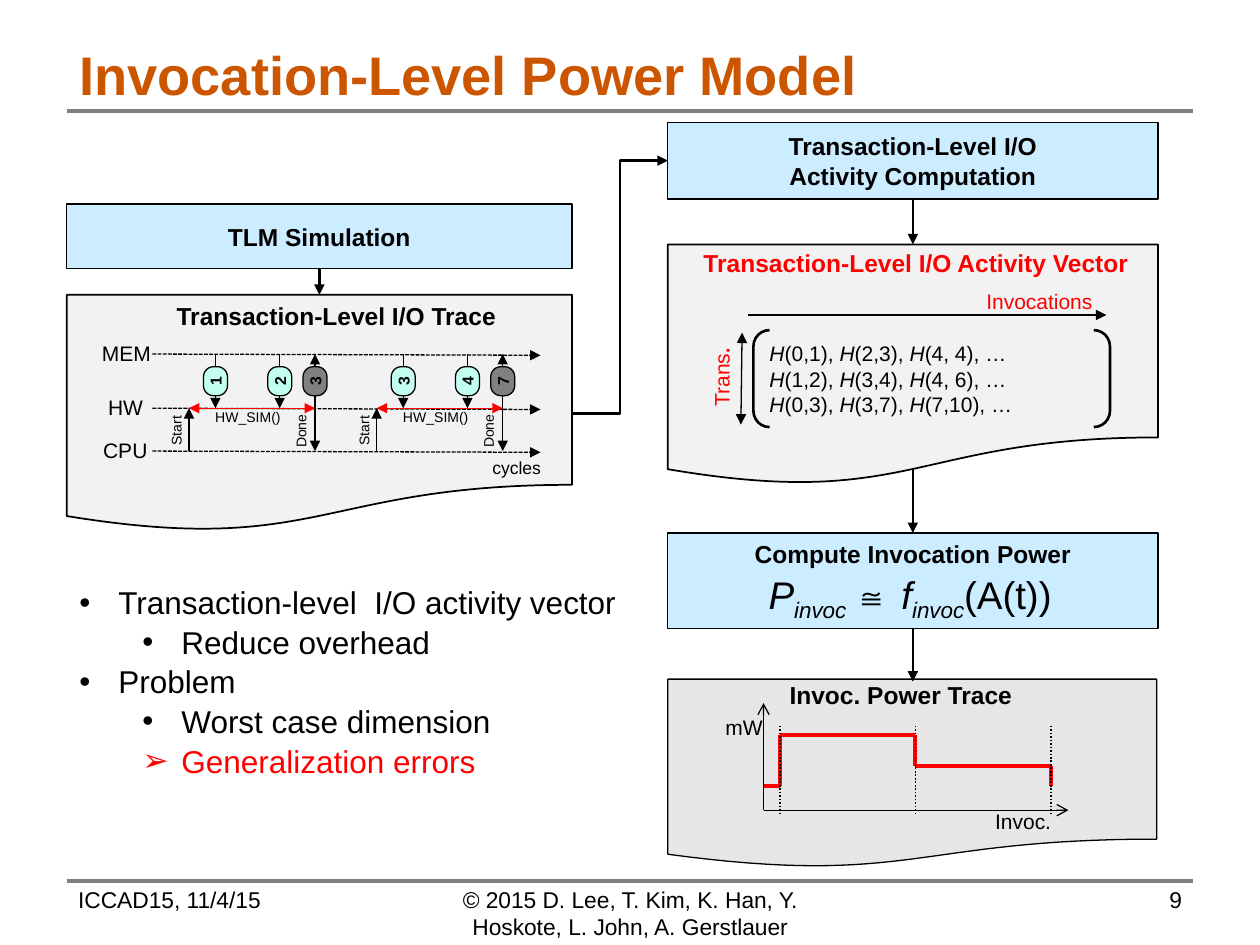
import dataclasses
import pptx
import pptx.util
import pptx.dml.color
import pptx.enum.dml
import pptx.enum.shapes
import pptx.enum.text
import pptx.oxml
import pptx.oxml.ns

RGB = pptx.dml.color.RGBColor
INK = RGB(0x00, 0x00, 0x00)
RED = RGB(0xFF, 0x00, 0x00)
RUST = RGB(0xCC, 0x55, 0x00)
GRAY = RGB(0x80, 0x80, 0x80)
SKY = RGB(0xCC, 0xEC, 0xFF)
MINT = RGB(0xC2, 0xFF, 0xF0)
PALE = RGB(0xF2, 0xF2, 0xF2)
ASH = RGB(0xE6, 0xE6, 0xE6)
KIND = pptx.enum.shapes.MSO_SHAPE
LINK = pptx.enum.shapes.MSO_CONNECTOR
DASH = pptx.enum.dml.MSO_LINE
SIDE = pptx.enum.text.PP_ALIGN
EDGE = pptx.enum.text.MSO_ANCHOR
WIDE, HIGH = pptx.util.Inches(10), pptx.util.Inches(7.5)
COLS = 100


def cell(n):
    return pptx.util.Emu(round(n * WIDE / COLS))


@dataclasses.dataclass
class Box:
    x: float
    y: float
    w: float
    h: float

    def sub(self, dx, dy, w, h):
        return Box(self.x + dx, self.y + dy, w, h)

    def span(self):
        return [cell(n) for n in (self.x, self.y, self.w, self.h)]


def add(par, text, size, color=INK, bold=False, slant=False, drop=False):
    run = par.add_run()
    run.text = text
    font = run.font
    font.name, font.size, font.color.rgb = "Arial", pptx.util.Pt(size), color
    font.bold, font.italic = bold, slant
    if drop:
        run._r.get_or_add_rPr().set("baseline", "-25000")


def setup(frame, pad=(1, 0.5), edge=EDGE.TOP, wrap=True):
    frame.margin_left = frame.margin_right = cell(pad[0])
    frame.margin_top = frame.margin_bottom = cell(pad[1])
    frame.vertical_anchor, frame.word_wrap = edge, wrap
    frame.auto_size = pptx.enum.text.MSO_AUTO_SIZE.NONE
    return frame


def note(pool, box, text, size, color=INK, bold=False, side=SIDE.LEFT, turn=0, **form):
    item = pool.add_textbox(*box.span())
    item.rotation = turn
    par = setup(item.text_frame, **form).paragraphs[0]
    par.alignment = side
    if text:
        add(par, text, size, color, bold)
    return par


def block(pool, box, kind, fill, lines=(), size=14, width=0.75, edge=EDGE.MIDDLE, pad=(0, 0.5)):
    item = pool.add_shape(kind, *box.span())
    paint(item, fill, width)
    frame = setup(item.text_frame, pad, edge)
    for i, text in enumerate(lines):
        par = frame.add_paragraph() if i else frame.paragraphs[0]
        par.alignment = SIDE.CENTER
        add(par, text, size, bold=True)
    return item


def paint(item, fill, width):
    item.shadow.inherit = False
    if fill is None:
        item.fill.background()
    else:
        item.fill.solid()
        item.fill.fore_color.rgb = fill
    item.line.color.rgb, item.line.width = INK, pptx.util.Pt(width)


def rule(pool, box, x1, y1, x2, y2, width=0.75, color=INK, dash=None, head=None, tail=None, kind=LINK.STRAIGHT):
    ends = [box.x + x1, box.y + y1, box.x + x2, box.y + y2]
    item = pool.add_connector(kind, *[cell(n) for n in ends])
    item.line.color.rgb, item.line.width = color, pptx.util.Pt(width)
    if dash:
        item.line.dash_style = dash
    ln = item.get_or_add_ln()
    for tag, tip in (("a:headEnd", head), ("a:tailEnd", tail)):
        if tip:
            end = pptx.oxml.ns.qn(tag)
            ln.append(ln.makeelement(end, {"type": tip}))
    item._element.spPr.append(ln.makeelement(pptx.oxml.ns.qn("a:effectLst"), {}))
    return item


def join(pool, box, start=None, end=None, kind=LINK.STRAIGHT):
    item = rule(pool, box, 0, 0, box.w, box.h, 1.5, tail="triangle", kind=kind)
    if start:
        item.begin_connect(*start)
    if end:
        item.end_connect(*end)


def header(slide, box):
    title = slide.shapes.title
    title.left, title.top, title.width, title.height = box.span()
    par = setup(title.text_frame, edge=EDGE.MIDDLE).paragraphs[0]
    par.alignment = SIDE.LEFT
    add(par, "Invocation-Level Power Model", 31, RUST, True)
    rule(slide.shapes, box, 0, box.h, box.w, box.h, 2.25, GRAY)


def footer(pool, box):
    rule(pool, box, 0, 0, box.w, 0, 2.25, GRAY)
    parts = ((0, 23.5, "ICCAD15, 11/4/15", SIDE.LEFT),
             (30.3, 28.8, "© 2015 D. Lee, T. Kim, K. Han, Y. Hoskote, L. John, A. Gerstlauer", SIDE.CENTER),
             (65.9, 23.5, "9", SIDE.RIGHT))
    for dx, w, text, side in parts:
        note(pool, box.sub(dx, 0, w, box.h), text, 13, side=side, pad=(0.9, 0.4))


def points(slide, box):
    body = slide.placeholders[1]
    body.left, body.top, body.width, body.height = box.span()
    frame = setup(body.text_frame)
    rows = ((0, "•", "Transaction-level  I/O activity vector", INK), (1, "•", "Reduce overhead", INK),
            (0, "•", "Problem", INK), (1, "•", "Worst case dimension", INK),
            (1, "➢", "Generalization errors", RED))
    for i, (level, mark, text, color) in enumerate(rows):
        par = frame.add_paragraph() if i else frame.paragraphs[0]
        par.level, par.space_before = level, pptx.util.Pt(1)
        add(par, text, 18, color)
        prop = par._p.get_or_add_pPr()
        prop.set("marL", str(cell(3.1 + 5 * level)))
        prop.set("indent", str(cell(-3.1)))
        for tag, key, value in (("a:buFont", "typeface", "Arial"), ("a:buChar", "char", mark)):
            prop.append(prop.makeelement(pptx.oxml.ns.qn(tag), {key: value}))


def cycle(pool, box, mem, hw, cpu, marks):
    tip = "triangle"
    stops = (2.1, 7.2, 10)
    rule(pool, box, 0, cpu, 0, hw, tail=tip)
    for x in stops[:2]:
        rule(pool, box, x, mem, x, hw, tail=tip)
    for y in (mem, cpu):
        rule(pool, box, stops[2], hw, stops[2], y, tail=tip)
    for x, mark, fill in zip(stops, marks, (MINT, MINT, GRAY)):
        pill = block(pool, box.sub(x - 1.15, 5.9, 2.3, 1.9), KIND.ROUNDED_RECTANGLE, fill, [mark], 9, pad=(0, 0))
        pill.adjustments[0], pill.rotation = 0.42, 270
    rule(pool, box, 0, hw, 10, hw, color=RED, head=tip, tail=tip)
    note(pool, box.sub(1.1, 8.5, 7.7, 2.4), "HW_SIM()", 8)
    for x, y, text in ((-2.4, 9.95, "Start"), (7.5, 10.15, "Done")):
        note(pool, box.sub(x, y, 2.7, 1.3), text, 8, turn=270, pad=(0, 0), wrap=False)


def trace(pool, box):
    pool = pool.add_group_shape().shapes
    page = block(pool, box, KIND.FLOWCHART_DOCUMENT, PALE, width=1)
    note(pool, box.sub(4.2, 0, 34.4, 3.4), "Transaction-Level I/O Trace", 14, bold=True, side=SIDE.CENTER)
    lanes = (4.7, 9, 12.4)
    for y, x, text in zip(lanes, (1.8, 2.3, 1.9), ("MEM", "HW", "CPU")):
        rule(pool, box, 6.8, y, 37.6, y + 0.1, dash=DASH.SQUARE_DOT, tail="triangle")
        note(pool, box.sub(x, y - 1.6, 6.9, 3), text, 12)
    note(pool, box.sub(32.8, 12.4, 6.9, 2.7), "cycles", 10)
    for x, marks in ((9.7, "123"), (24.6, "347")):
        cycle(pool, box.sub(x, 0, 15, box.h), *lanes, marks)
    return page


def vector(pool, box):
    page = block(pool, box, KIND.FLOWCHART_DOCUMENT, PALE, width=1)
    note(pool, box.sub(-0.4, -0.2, 40.2, 3.4), "Transaction-Level I/O Activity Vector", 14, RED, True, SIDE.CENTER)
    note(pool, box.sub(24.3, 3, 13.8, 3), "Invocations", 12, RED)
    rule(pool, box, 6.4, 5.6, 34.8, 5.6, tail="triangle")
    add(note(pool, box.sub(0.4, 8.5, 7.7, 3), "Trans", 12, RED, turn=270), ".", 11, RED, True)
    rule(pool, box, 5.9, 7, 5.8, 14.3, head="triangle", tail="triangle")
    pair = block(pool, box.sub(6.8, 6.8, 28.3, 7.7), KIND.DOUBLE_BRACKET, None, width=1.5, edge=EDGE.TOP)
    frame = pair.text_frame
    frame.margin_left = cell(0.9)
    rows = (("(0,1), ", "(2,3), ", "(4, 4), …"), ("(1,2), ", "(3,4), ", "(4, 6), …"),
            ("(0,3), ", "(3,7), ", "(7,10), …"))
    for i, row in enumerate(rows):
        par = frame.add_paragraph() if i else frame.paragraphs[0]
        par.alignment = SIDE.LEFT
        for item in row:
            add(par, "H", 12, slant=True)
            add(par, item, 12)
    return page


def power(pool, box):
    item = block(pool, box, KIND.RECTANGLE, SKY, ["Compute Invocation Power"], edge=EDGE.TOP)
    par = note(pool, box.sub(7.1, 2.6, 24.9, 4.6), "", 22, pad=(0.9, 0.4), wrap=False)
    for text, slant, drop in (("P", True, False), ("invoc ", True, True), ("≅ ", False, False),
                              ("f", True, False), ("invoc", True, True), ("(A(t))", False, False)):
        add(par, text, 22, slant=slant, drop=drop)
    return item


def chart(pool, box):
    wave = ((box.w, 12.7), (19.4, 12.7), (19.4, 16.5), (0, 13.9))
    edge = [(box.w, 0)]
    for i in range(33):
        t = i / 32
        parts = ((1 - t) ** 3, 3 * t * (1 - t) ** 2, 3 * t * t * (1 - t), t ** 3)
        edge.append(tuple(sum(k * p[axis] for k, p in zip(parts, wave)) for axis in (0, 1)))
    pen = pool.build_freeform(cell(box.x), cell(box.y))
    pen.add_line_segments([(cell(box.x + x), cell(box.y + y)) for x, y in edge])
    paint(pen.convert_to_shape(), ASH, 0.75)
    pool = pool.add_group_shape().shapes
    rule(pool, box, 7.6, 10.4, 31.8, 10.4, tail="arrow")
    rule(pool, box, 7.6, 10.4, 7.6, 1.9, tail="arrow")
    note(pool, box.sub(25, 9.8, 7.5, 3), "Invoc.", 12)
    note(pool, box.sub(3.6, 2.3, 5.6, 3), "mW", 12)
    steps = ((7.6, 8.5), (8.9, 8.5), (8.9, 4.4), (19.65, 4.4), (19.65, 6.9), (30.4, 6.9), (30.4, 8.5))
    for here, there in zip(steps, steps[1:]):
        rule(pool, box, *here, *there, 2.25, RED)
    for x, y in steps[1::2]:
        rule(pool, box, x, 3.7, x, 10.6, 1, dash=DASH.ROUND_DOT)
    note(pool, box.sub(8.1, -0.4, 20.8, 3.4), "Invoc. Power Trace", 14, bold=True, side=SIDE.CENTER)


def main():
    deck = pptx.Presentation()
    deck.slide_width, deck.slide_height = WIDE, HIGH
    slide = deck.slides.add_slide(deck.slide_layouts[1])
    pool = slide.shapes
    header(slide, Box(5.3, 2.9, 89.4, 5.9))
    points(slide, Box(5.3, 45.8, 45.3, 19.2))
    footer(pool, Box(5.3, 69.9, 89.4, 4.6))
    sim = block(pool, Box(5.3, 16.2, 40.1, 5.1), KIND.RECTANGLE, SKY, ["TLM Simulation"])
    act = block(pool, Box(53, 9.7, 38.9, 6.1), KIND.RECTANGLE, SKY, ["Transaction-Level I/O", "Activity Computation"])
    log = trace(pool, Box(5.3, 23.4, 40.1, 18.8))
    grid = vector(pool, Box(53, 19.4, 38.9, 19.1))
    watt = power(pool, Box(53, 42.3, 38.9, 7.6))
    chart(pool, Box(53, 53.9, 38.8, 14.8))
    join(pool, Box(25.35, 21.3, 0, 2.1), (sim, 2), (log, 0))
    join(pool, Box(72.45, 15.8, 0, 3.6), (act, 2), (grid, 0))
    join(pool, Box(72.45, 37.2, 0, 5.1), end=(watt, 0))
    join(pool, Box(72.45, 49.9, 0, 4.2), (watt, 2))
    join(pool, Box(45.4, 32.8, 7.6, -20.05), (log, 3), (act, 1), LINK.ELBOW)
    deck.save("out.pptx")


if __name__ == "__main__":
    main()
